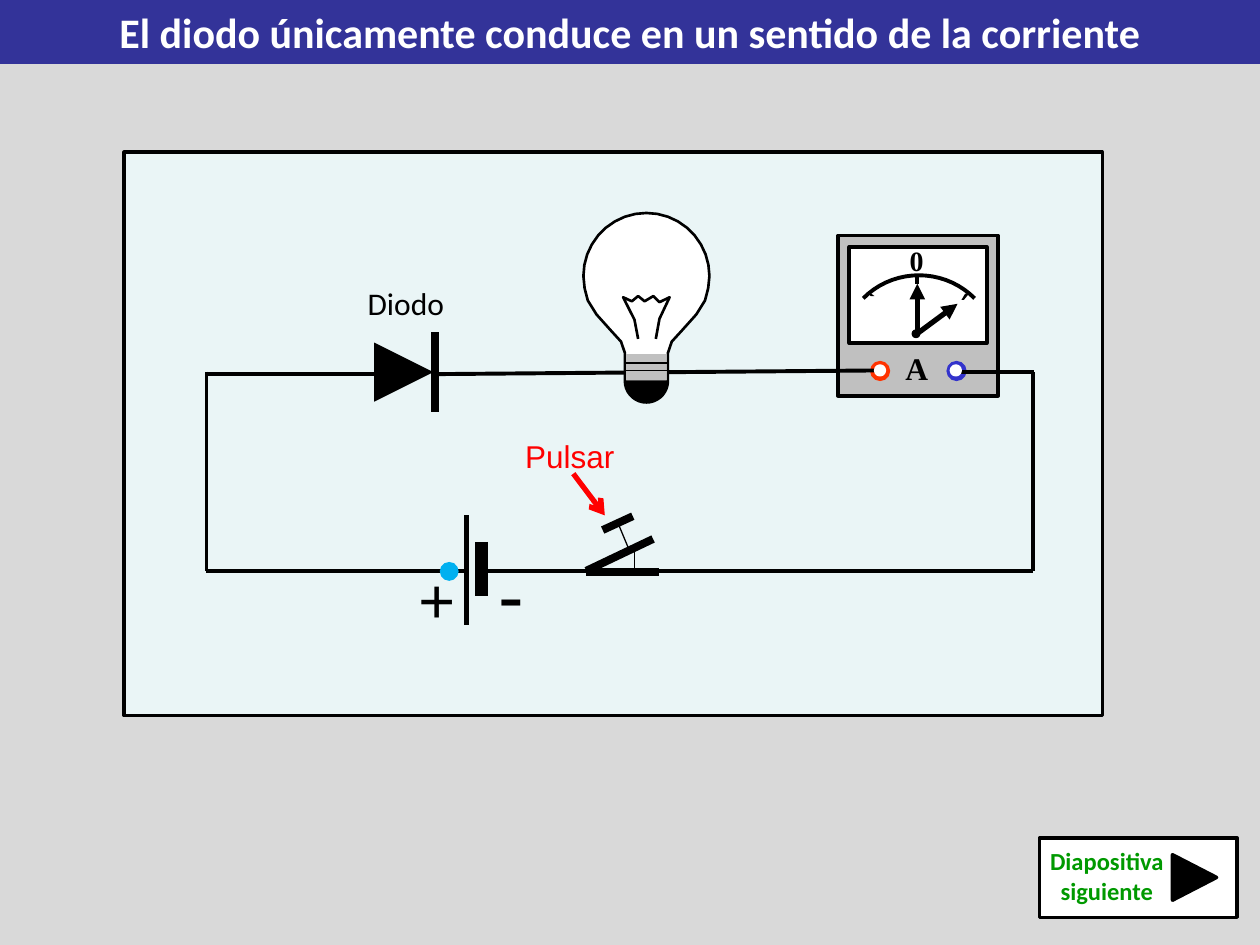
from math import cos, radians, sin

from lxml.etree import SubElement
from pptx import Presentation
from pptx.dml.color import RGBColor
from pptx.enum.shapes import MSO_CONNECTOR as LINK, MSO_SHAPE as SHAPE
from pptx.enum.text import MSO_ANCHOR as ANCHOR, PP_ALIGN as ALIGN
from pptx.oxml.ns import qn
from pptx.util import Pt

COLORS = {
    "page": "D9D9D9", "banner": "333399", "panel": "EAF5F6",
    "ink": "000000", "white": "FFFFFF", "metal": "C0C0C0",
    "positive": "FF3300", "negative": "3333CC", "push": "FF0000",
    "next": "009900", "charge": "00B0F0",
}


def rgb(color):
    return RGBColor.from_string(COLORS[color])


def paint(shape, fill=None, line=None, width=1):
    shape.shadow.inherit = False
    if fill:
        shape.fill.solid()
        shape.fill.fore_color.rgb = rgb(fill)
    else:
        shape.fill.background()
    if line:
        shape.line.color.rgb = rgb(line)
        shape.line.width = Pt(width)
    else:
        shape.line.fill.background()
    return shape


def add_block(slide, kind, box, fill, line=None, width=1):
    shape = slide.shapes.add_shape(kind, *[Pt(v) for v in box])
    return paint(shape, fill, line, width)


def add_outline(slide, origin, points, fill=None, line=None, width=1, close=True):
    x, y = origin
    spots = [(Pt(x + px), Pt(y + py)) for px, py in points]
    builder = slide.shapes.build_freeform(*spots[0])
    builder.add_line_segments(spots[1:], close=close)
    return paint(builder.convert_to_shape(), fill, line, width)


def add_line(slide, origin, start, end, width=2.25, color="ink", tip=None):
    x, y = origin
    line = slide.shapes.add_connector(
        LINK.STRAIGHT, Pt(x + start[0]), Pt(y + start[1]),
        Pt(x + end[0]), Pt(y + end[1]))
    line.line.color.rgb = rgb(color)
    line.line.width = Pt(width)
    if tip:
        SubElement(line.line._get_or_add_ln(), qn("a:tailEnd"), type=tip)
    SubElement(line._element.spPr, qn("a:effectLst"))


def write(frame, text, size, font, color, bold=False, align=ALIGN.LEFT):
    paragraph = frame.paragraphs[0]
    paragraph.alignment = align
    run = paragraph.add_run()
    run.text = text
    run.font.size = Pt(size)
    run.font.name = font
    run.font.bold = bold
    run.font.color.rgb = rgb(color)


def add_label(slide, box, text, size, font, color="ink", bold=False, align=ALIGN.LEFT):
    frame = slide.shapes.add_textbox(*[Pt(v) for v in box]).text_frame
    frame.word_wrap = True
    write(frame, text, size, font, color, bold, align)


def arc(center, radius, first, last, step=10):
    return [(center[0] + radius * cos(radians(a)), center[1] + radius * sin(radians(a)))
            for a in range(first, last + 1, step)]


def draw_title(slide, box):
    title = slide.shapes.title
    title.left, title.top, title.width, title.height = [Pt(v) for v in box]
    paint(title, "banner")
    frame = title.text_frame
    frame.vertical_anchor = ANCHOR.MIDDLE
    write(frame, "El diodo únicamente conduce en un sentido de la corriente",
          24, "Calibri", "white", True, ALIGN.CENTER)


def draw_meter(slide, box):
    x, y, w, h = box
    origin = x, y
    add_block(slide, SHAPE.RECTANGLE, box, "metal", "ink", 2)
    add_block(slide, SHAPE.RECTANGLE, (x + 6.5, y + 6.5, w - 13, 55), "white", "ink", 2)
    for left, color in ((18.7, "positive"), (62.4, "negative")):
        add_block(slide, SHAPE.OVAL, (x + left, y + 72, 10.8, 10.8), color, color, 0.75)
    add_label(slide, (x + 33.8, y + 0.8, 22.3, 26.6), "0", 16, "Times New Roman",
              bold=True, align=ALIGN.CENTER)
    add_label(slide, (x + 29, y + 61.2, 32, 28.8), "A", 18, "Times New Roman",
              bold=True, align=ALIGN.CENTER)
    for tick in ([(18, 32.4), (20.9, 34.6), (18.7, 34.6), (16.6, 32.4)],
                 [(70.6, 36.8), (72.7, 33.2), (74.9, 33.2), (72, 36.8)]):
        add_outline(slide, origin, tick, "ink")
    add_outline(slide, origin, arc((46.3, 67.7), 45, 225, 315, 5), None, "ink", 2.25, False)
    add_line(slide, origin, (45.4, 23), (45.4, 27.5))
    add_block(slide, SHAPE.OVAL, (x + 42.5, y + 54, 4.3, 4.3), "ink", "ink", 0.75)
    for start, end in (((45.4, 57), (45.4, 27.5)), ((44, 57), (68.4, 39))):
        add_line(slide, origin, start, end, 3, tip="triangle")


def draw_terminals(slide, box):
    for left in (21.6, 64.9):
        add_block(slide, SHAPE.OVAL, (box[0] + left, box[1] + 74.6, 5, 5), "white", "white", 2)


def draw_bulb(slide, box):
    x, y, w, h = box
    origin = x + w / 2, y
    neck = [(35.3, 43), (33.5, 50), (28.5, 58), (20, 67.5), (14.5, 73.5), (12.3, 80)]
    side = arc((0, 36), 36, -90, 0) + neck + arc((0, 96), 12.3, 0, 90)
    mirrored = [(-px, py) for px, py in reversed(side)]
    add_outline(slide, origin, side + mirrored, "white", "ink", 1.5)
    filament = [(5.4, 72), (7.5, 60.5), (13.3, 48.2), (7.5, 51), (4, 47.5), (-1, 50.5),
                (-4.7, 47.5), (-8.3, 50.5), (-13.3, 48.2), (-6.8, 61), (-4.7, 72)]
    add_outline(slide, origin, filament, None, "ink", 1.5, False)
    add_block(slide, SHAPE.RECTANGLE, (origin[0] - 11.6, y + 80.6, 23.2, 15), "metal")
    for thread in (85.7, 90):
        add_line(slide, origin, (-11.6, thread), (11.6, thread), 0.75)
    add_outline(slide, origin, arc((0, 96), 12, 0, 180), "ink", "ink", 0.75)


def draw_diode(slide, box):
    x, y, w, h = box
    add_label(slide, (x, y, w, 28.8), "Diodo", 18, "Calibri")
    anode = add_block(slide, SHAPE.ISOSCELES_TRIANGLE, (x + 10.8, y + 36.8, 33.8, 33.8), "ink")
    anode.rotation = 90
    add_line(slide, (x, y), (45.4, 31), (45.4, h), 4.5)


def draw_battery(slide, box):
    x, y, w, h = box
    add_line(slide, (x, y), (34.4, 0.5), (34.4, 63), 3)
    add_line(slide, (x, y), (43, 15.6), (43, 46.6), 7.5)
    add_label(slide, (x, y + 22.8, 33.8, 51), "+", 36, "Arial")
    add_label(slide, (x + 45.9, y + 14.9, 33.8, 60.5), "-", 44, "Arial")
    add_block(slide, SHAPE.OVAL, (x + 19.3, y + 27.1, 10.8, 10.8), "charge")


def draw_switch(slide, box):
    x, y, w, h = box
    parts = [((42, 80.7), (83.6, 80.7), 4.5), ((69.4, 69.7), (69.4, 80.7), 0.75),
             ((42, 80.2), (80.2, 62), 4.5), ((60, 52.6), (67.2, 69.9), 0.75),
             ((51.4, 56.9), (68.6, 49), 4.5)]
    for start, end, width in parts:
        add_line(slide, (x, y), start, end, width)
    add_label(slide, (x, y, 72.7, 28.8), "Pulsar", 18, "Arial", "push")
    add_line(slide, (x, y), (34.6, 24.7), (52.6, 48.5), 3, "push", "arrow")


def draw_wires(slide, origin):
    left, right, upper, lower = 47, 519.4, 126.8, 239.2
    wires = [((right, lower), (right, 125.4)), ((177.4, upper), (429.4, 124.7)),
             ((143.6, upper), (left, upper)), ((left, 125.4), (left, lower)),
             ((left, lower), (194.7, lower)), ((205.5, lower), (268, lower)),
             ((296.2, lower), (right, lower)), ((474.8, 125.4), (right + 0.7, 125.4))]
    for start, end in wires:
        add_line(slide, origin, start, end)


def draw_circuit(slide, box):
    x, y, w, h = box
    add_block(slide, SHAPE.RECTANGLE, box, "panel", "ink", 2)
    meter = x + 407.8, y + 47.6, 91.6, 91.6
    draw_meter(slide, meter)
    draw_diode(slide, (x + 132, y + 72, 71.3, 76.4))
    draw_wires(slide, (x, y))
    draw_terminals(slide, meter)
    draw_bulb(slide, (x + 262.4, y + 34.7, 72, 108))
    draw_battery(slide, (x + 161, y + 207, 80, 76))
    draw_switch(slide, (x + 222, y + 159, 84, 83))


def draw_next_button(slide, box):
    x, y, w, h = box
    add_block(slide, SHAPE.RECTANGLE, box, "white", "ink", 2)
    add_label(slide, (x - 23.8, y + 1.4, 124.6, 41), "Diapositiva siguiente",
              14, "Calibri", "next", True, ALIGN.CENTER)
    arrow = add_block(slide, SHAPE.ISOSCELES_TRIANGLE, (x + 75.6, y + 10, 26, 25.2),
                      "ink", "ink", 2)
    arrow.rotation = 90


def main():
    deck = Presentation()
    deck.slide_width, deck.slide_height = Pt(720), Pt(540)
    slide = deck.slides.add_slide(deck.slide_layouts[5])
    slide.background.fill.solid()
    slide.background.fill.fore_color.rgb = rgb("page")
    draw_title(slide, (0, 0, 720, 36.5))
    draw_circuit(slide, (71, 87, 559, 322))
    draw_next_button(slide, (594, 478.8, 113, 45.4))
    deck.save("out.pptx")


if __name__ == "__main__":
    main()
